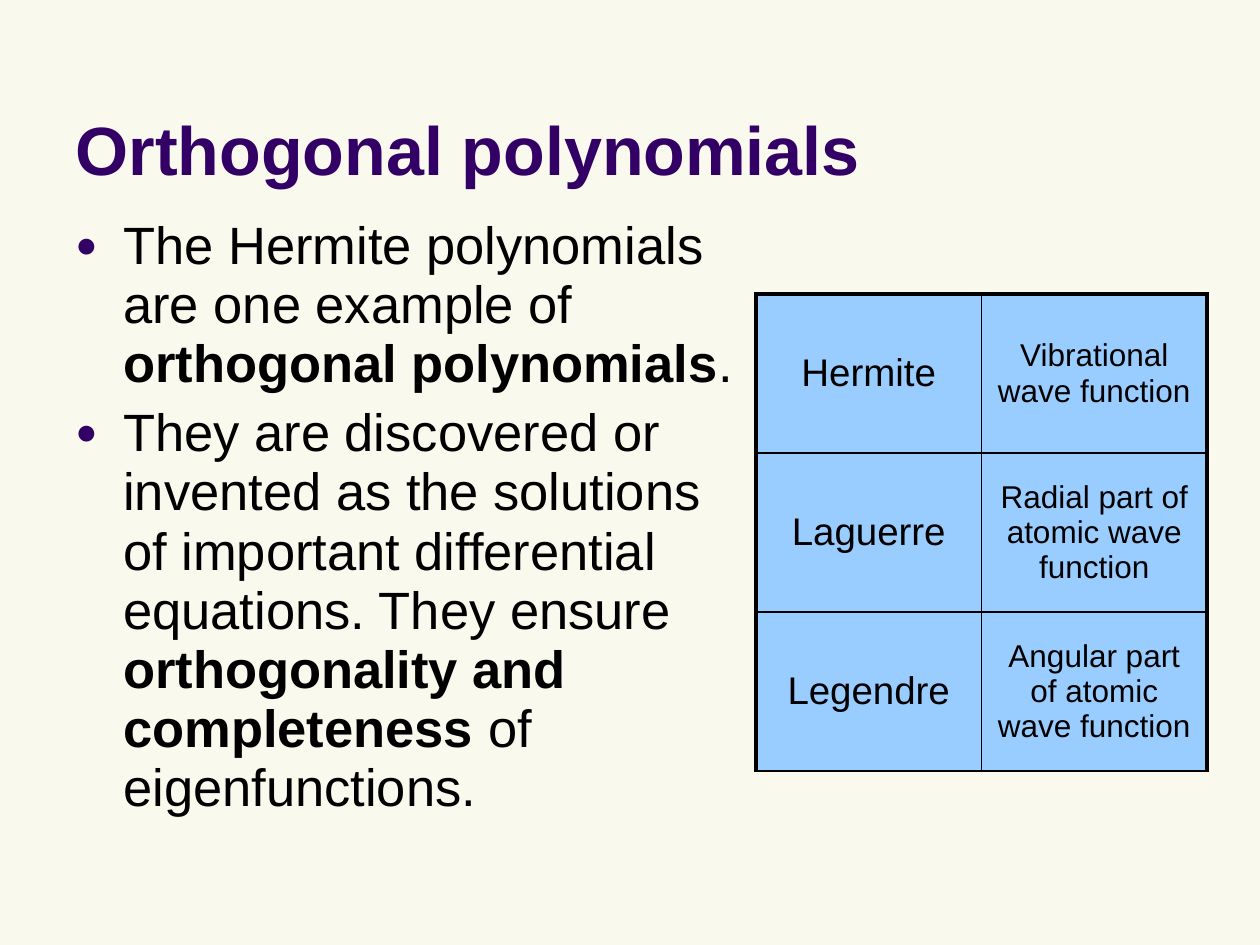
from typing import NamedTuple

from lxml.etree import SubElement
from pptx import Presentation
from pptx.dml.color import RGBColor
from pptx.enum.text import MSO_ANCHOR as Anchor, MSO_AUTO_SIZE as AutoSize, PP_ALIGN as Align
from pptx.oxml.ns import qn
from pptx.util import Inches, Pt

WIDTH, HEIGHT = Inches(10), Inches(7.5)
FONT = "Arial"
COLORS = {"background": "F9F9EE", "accent": "330066", "text": "000000", "cell": "99CCFF"}
THIN, THICK = Pt(1), Pt(2.25)


class Area(NamedTuple):
    left: float
    top: float
    width: float
    height: float

    def lengths(self) -> tuple[int, ...]:
        sides = (WIDTH, HEIGHT, WIDTH, HEIGHT)
        return tuple(round(share * side) for share, side in zip(self, sides))


class Polynomial(NamedTuple):
    name: str
    use: str


class Span(NamedTuple):
    text: str
    bold: bool = False


TITLE_AREA = Area(0.05, 0.017, 0.9, 0.19)
BODY_AREA = Area(0.05, 0.223, 0.558, 0.75)
TABLE_AREA = Area(0.6, 0.311, 0.358, 0.505)

BULLETS = [
    [Span("The Hermite polynomials are one example of "),
     Span("orthogonal polynomials", True), Span(".")],
    [Span("They are discovered or invented as the solutions of important "
          "differential equations. They ensure "),
     Span("orthogonality and completeness ", True), Span("of eigenfunctions.")],
]
POLYNOMIALS = [
    Polynomial("Hermite", "Vibrational wave function"),
    Polynomial("Laguerre", "Radial part of atomic wave function"),
    Polynomial("Legendre", "Angular part of atomic wave function"),
]


def color(name: str) -> RGBColor:
    return RGBColor.from_string(COLORS[name])


def add_text(paragraph, text: str, *, size: float, fill: str = "text", bold: bool = False) -> None:
    run = paragraph.add_run()
    run.text = text
    font = run.font
    font.name, font.size, font.bold = FONT, Pt(size), bold
    font.color.rgb = color(fill)


def add_bullet(paragraph) -> None:
    properties = paragraph._p.get_or_add_pPr()
    indent = Inches(0.38)
    properties.set("marL", str(indent))
    properties.set("indent", str(-indent))
    bullet_color = SubElement(properties, qn("a:buClr"))
    SubElement(bullet_color, qn("a:srgbClr"), val=COLORS["accent"])
    SubElement(properties, qn("a:buSzPct"), val="70000")
    SubElement(properties, qn("a:buFont"), typeface=FONT)
    SubElement(properties, qn("a:buChar"), char="●")


def add_title(slide) -> None:
    title = slide.shapes.title
    title.left, title.top, title.width, title.height = TITLE_AREA.lengths()
    frame = title.text_frame
    frame.auto_size = AutoSize.NONE
    frame.vertical_anchor = Anchor.BOTTOM
    paragraph = frame.paragraphs[0]
    paragraph.alignment = Align.LEFT
    add_text(paragraph, "Orthogonal polynomials", size=39, fill="accent", bold=True)


def add_body(slide) -> None:
    frame = slide.shapes.add_textbox(*BODY_AREA.lengths()).text_frame
    frame.word_wrap = True
    for index, spans in enumerate(BULLETS):
        paragraph = frame.add_paragraph() if index else frame.paragraphs[0]
        paragraph.line_spacing = 0.94
        paragraph.space_before = Pt(5.5)
        add_bullet(paragraph)
        for span in spans:
            add_text(paragraph, span.text, size=30, bold=span.bold)


def set_borders(cell, widths: dict[str, int]) -> None:
    properties = cell._tc.get_or_add_tcPr()
    for index, (side, width) in enumerate(widths.items()):
        line = properties.makeelement(qn(f"a:ln{side}"), {"w": str(width)})
        solid = SubElement(line, qn("a:solidFill"))
        SubElement(solid, qn("a:srgbClr"), val=COLORS["text"])
        properties.insert(index, line)


def add_polynomial_table(slide) -> None:
    rows, columns = len(POLYNOMIALS), len(Polynomial._fields)
    table = slide.shapes.add_table(rows, columns, *TABLE_AREA.lengths()).table
    table.first_row = table.horz_banding = False
    for row, polynomial in enumerate(POLYNOMIALS):
        for column, (text, size) in enumerate(zip(polynomial, (22, 18))):
            cell = table.cell(row, column)
            cell.vertical_anchor = Anchor.MIDDLE
            cell.fill.solid()
            cell.fill.fore_color.rgb = color("cell")
            paragraph = cell.text_frame.paragraphs[0]
            paragraph.alignment = Align.CENTER
            add_text(paragraph, text, size=size)
            set_borders(cell, {
                "L": THICK if column == 0 else THIN,
                "R": THICK if column == columns - 1 else THIN,
                "T": THICK if row == 0 else THIN,
                "B": THIN,
            })


def main() -> None:
    presentation = Presentation()
    presentation.slide_width, presentation.slide_height = WIDTH, HEIGHT
    slide = presentation.slides.add_slide(presentation.slide_layouts.get_by_name("Title Only"))
    slide.background.fill.solid()
    slide.background.fill.fore_color.rgb = color("background")
    add_title(slide)
    add_body(slide)
    add_polynomial_table(slide)
    presentation.save("out.pptx")


if __name__ == "__main__":
    main()
